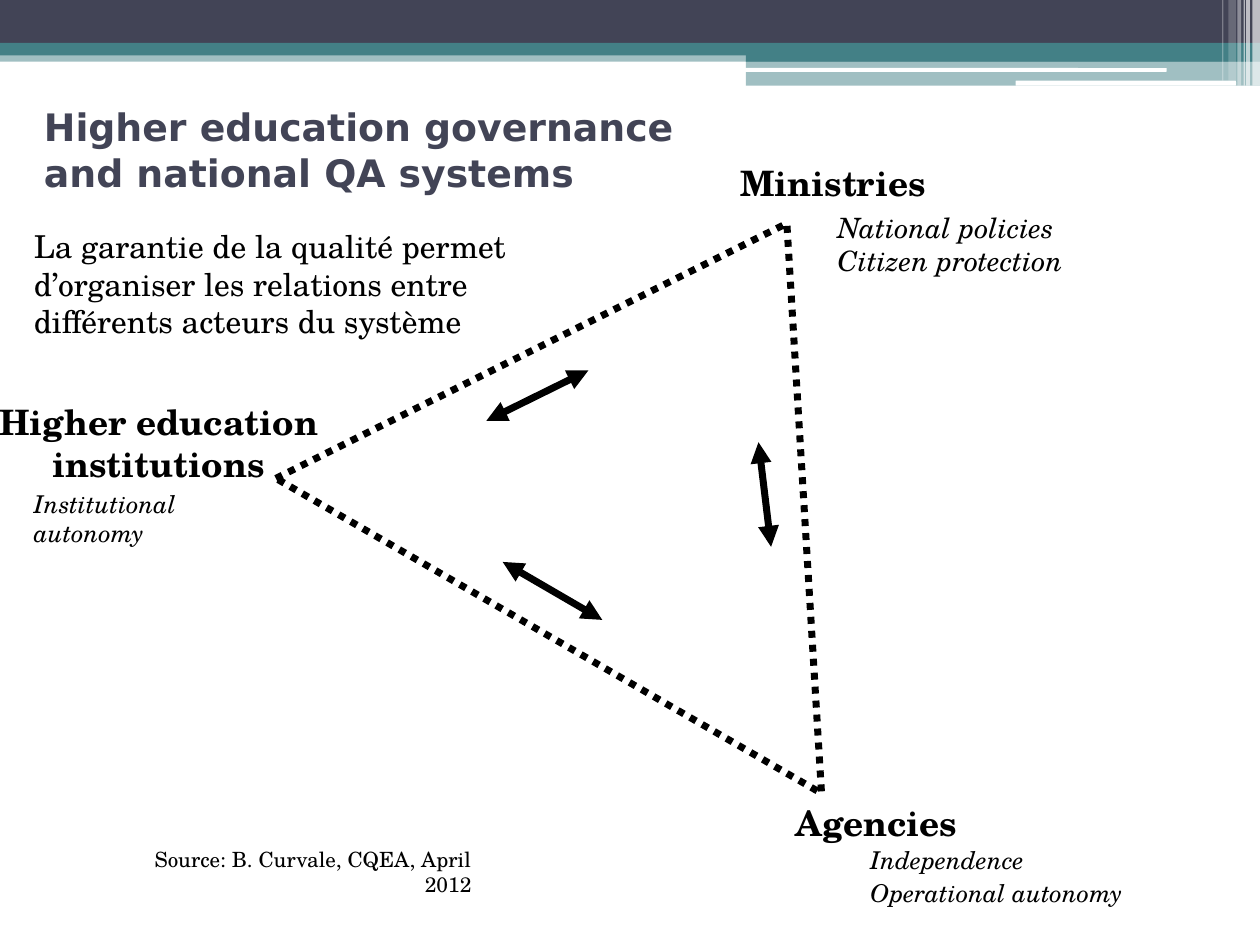
from dataclasses import dataclass

from lxml import etree
from pptx import Presentation
from pptx import util as u
from pptx.dml import color
from pptx.enum import dml, shapes, text
from pptx.oxml import ns


@dataclass(frozen=True)
class Theme:
    """Colours, fonts and type sizes of the page."""
    navy: str = "424456"
    teal: str = "438086"
    white: str = "FFFFFF"
    black: str = "000000"
    heading_font: str = "DejaVu Sans"
    body_font: str = "TeX Gyre Schola"
    title: float = 21.6
    actor: float = 20
    intro: float = 18
    policy: float = 16
    detail: float = 14
    source: float = 12
    stroke: float = 4


THEME = Theme()
LEFT, CENTER, RIGHT = text.PP_ALIGN.LEFT, text.PP_ALIGN.CENTER, text.PP_ALIGN.RIGHT


def rgb(value):
    """Turn a hex string into a colour."""
    return color.RGBColor.from_string(value)


def add_preset(page, kind, area):
    """Add a preset shape without a shadow."""
    shape = page.shapes.add_shape(kind, *map(u.Inches, area))
    shape.shadow.inherit = False
    return shape


def add_bar(page, area, fill, opacity=100, kind=shapes.MSO_SHAPE.RECTANGLE):
    """Add a filled bar with no outline, at the given percentage of opacity."""
    bar = add_preset(page, kind, area)
    bar.fill.solid()
    bar.fill.fore_color.rgb = rgb(fill)
    bar.line.fill.background()
    if opacity < 100:
        tint = bar.fill._xPr.find(".//" + ns.qn("a:srgbClr"))
        etree.SubElement(tint, ns.qn("a:alpha"), val=str(opacity * 1000))


def add_banner(page):
    """Draw the bands and stripes along the top edge."""
    add_bar(page, (0, 0.4, 10, 0.09), THEME.teal, 50)
    add_bar(page, (0, 0, 10, 0.34), THEME.navy)
    add_bar(page, (0, 0.34, 10, 0.1), THEME.teal)
    add_bar(page, (5.92, 0.39, 4.08, 0.1), THEME.teal)
    add_bar(page, (5.92, 0.48, 4.08, 0.2), THEME.teal, 50)
    for area in ((5.91, 0.54, 3.35, 0.03), (8.06, 0.64, 1.75, 0.04)):
        add_bar(page, area, THEME.white, kind=shapes.MSO_SHAPE.ROUNDED_RECTANGLE)
    stripes = (
        (9.94, 0.06, 0.68, 65), (9.89, 0.03, 0.68, 65), (9.87, 0.01, 0.68, 60),
        (9.82, 0.03, 0.68, 40), (9.75, 0.06, 0.64, 20), (9.7, 0.01, 0.64, 30),
    )
    for left, width, height, opacity in stripes:
        add_bar(page, (left, 0, width, height), THEME.white, opacity)


def style_line(line):
    """Give a line the heavy black stroke."""
    line.color.rgb = rgb(THEME.black)
    line.width = u.Pt(THEME.stroke)


def add_triangle(page):
    """Draw the dotted triangle that links the three actors."""
    triangle = add_preset(page, shapes.MSO_SHAPE.ISOSCELES_TRIANGLE, (2.8, 1.52, 5, 3.78))
    triangle.rotation = 30
    triangle.fill.background()
    style_line(triangle.line)
    triangle.line.dash_style = dml.MSO_LINE.ROUND_DOT


def add_double_arrow(page, start, end):
    """Draw a straight arrow with a head at both ends."""
    arrow = page.shapes.add_connector(
        shapes.MSO_CONNECTOR.STRAIGHT, *map(u.Inches, start + end))
    style_line(arrow.line)
    outline = arrow.line._get_or_add_ln()
    for tip in ("a:headEnd", "a:tailEnd"):
        etree.SubElement(outline, ns.qn(tip), type="triangle")
    etree.SubElement(arrow._element.spPr, ns.qn("a:effectLst"))


def add_text(page, area, lines, size, align=LEFT, bold=False, italic=False,
             font=THEME.body_font, ink=THEME.black, gap=0):
    """Add a wrapped text box with one paragraph per line."""
    box = page.shapes.add_textbox(*map(u.Inches, area))
    frame = box.text_frame
    frame.word_wrap = True
    for index, line in enumerate(lines):
        para = frame.add_paragraph() if index else frame.paragraphs[0]
        para.alignment = align
        para.space_before = u.Pt(gap if index else 0)
        span = para.add_run()
        span.text = line
        span.font.name = font
        span.font.size = u.Pt(size)
        span.font.bold = bold
        span.font.italic = italic
        span.font.color.rgb = rgb(ink)
    return frame


def add_actors(page):
    """Label the triangle's corners and their roles."""
    actors = (
        ((5.53, 1.23, 2.17, 0.44), "Ministries"),
        ((-0.2, 3.13, 2.92, 0.77), "Higher education institutions"),
        ((5.87, 6.31, 2.17, 0.44), "Agencies"),
    )
    for area, name in actors:
        add_text(page, area, [name], THEME.actor, CENTER, bold=True)
    roles = (
        ((6.81, 6.66, 2.75, 0.61), ["Independence", "Operational autonomy"], THEME.detail, 2.1),
        ((0.17, 3.83, 2.23, 0.34), ["Institutional autonomy"], THEME.detail, 0),
        ((6.55, 1.62, 1.99, 0.64), ["National policies", "Citizen protection"], THEME.policy, 0),
    )
    for area, lines, size, gap in roles:
        add_text(page, area, lines, size, italic=True, gap=gap)


def main():
    """Build the page and save the deck."""
    deck = Presentation()
    deck.slide_width, deck.slide_height = u.Inches(10), u.Inches(7.5)
    page = deck.slides.add_slide(deck.slide_layouts[6])
    add_banner(page)
    add_triangle(page)
    arrows = (
        ((3.86, 3.34), (4.67, 2.94)),
        ((6.02, 3.51), (6.12, 4.34)),
        ((3.99, 4.46), (4.78, 4.92)),
    )
    for start, end in arrows:
        add_double_arrow(page, start, end)
    add_actors(page)
    title = add_text(page, (0.25, 0.83, 5.75, 0.71),
                     ["Higher education governance and national QA systems"],
                     THEME.title, bold=True, font=THEME.heading_font, ink=THEME.navy)
    title.vertical_anchor = text.MSO_ANCHOR.MIDDLE
    add_text(page, (0.92, 6.67, 2.92, 0.5), ["Source: B. Curvale, CQEA, April 2012"],
             THEME.source, RIGHT)
    add_text(page, (0.17, 1.75, 4.17, 1.01),
             ["La garantie de la qualité permet d’organiser les relations entre "
              "différents acteurs du système"], THEME.intro)
    deck.save("out.pptx")


if __name__ == "__main__":
    main()
